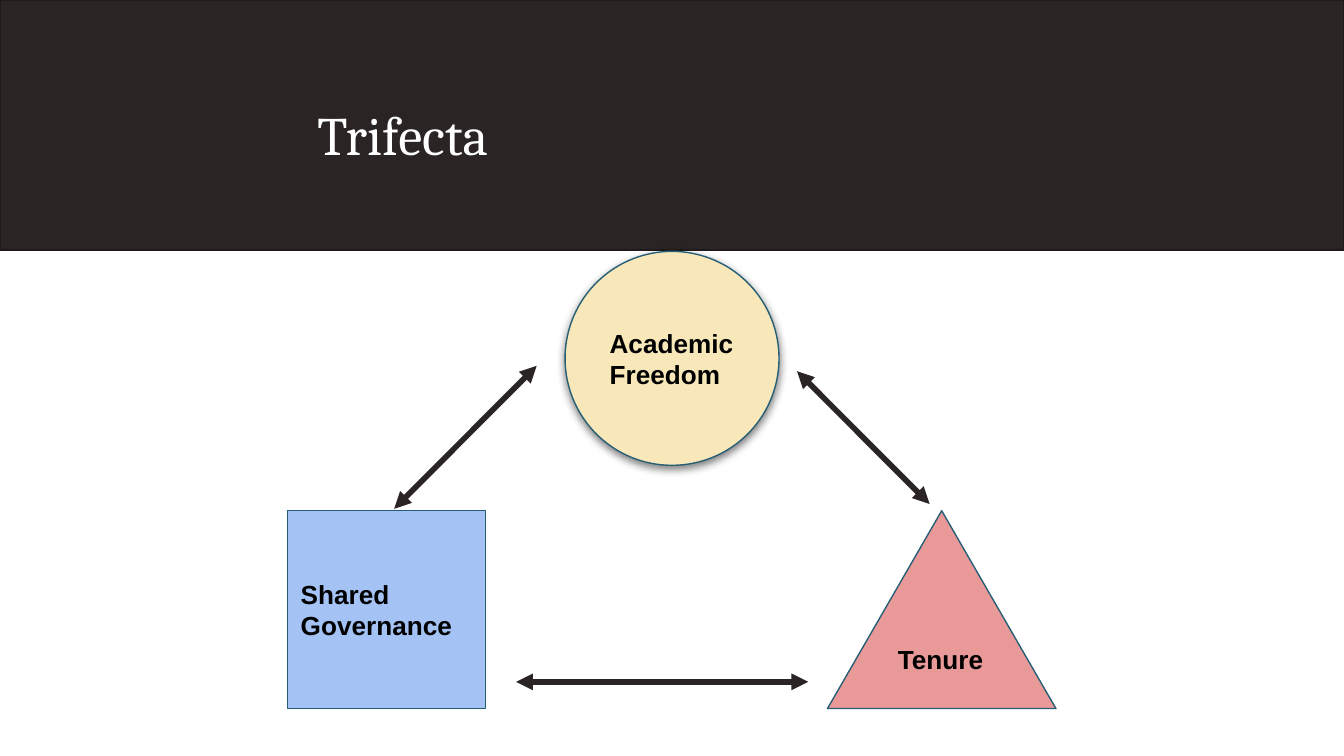
import pptx
import pptx.util
import pptx.dml.color
import pptx.enum.shapes
import pptx.enum.text
import pptx.oxml
import pptx.oxml.ns

Pt = pptx.util.Pt
SHAPES = pptx.enum.shapes.MSO_SHAPE
MIDDLE = pptx.enum.text.MSO_ANCHOR.MIDDLE
LEFT = pptx.enum.text.PP_ALIGN.LEFT

COLORS = {
    "band": "2B2425", "band_line": "1F1A1B", "title": "FFFFFF", "label": "000000",
    "outline": "265E76", "cream": "F8E8B9", "blue": "A4C2F4", "red": "EA9999",
}
SHADOW = (
    f'<a:effectLst {pptx.oxml.ns.nsdecls("a")}>'
    '<a:outerShdw blurRad="57150" dist="19050" dir="5400000" algn="bl" rotWithShape="0">'
    '<a:srgbClr val="000000"><a:alpha val="50000"/></a:srgbClr>'
    '</a:outerShdw></a:effectLst>'
)


def rgb(name):
    return pptx.dml.color.RGBColor.from_string(COLORS[name])


def add_filled_shape(kind, box, fill, outline, width):
    shape = slide.shapes.add_shape(kind, *map(Pt, box))
    shape.shadow.inherit = False
    shape.fill.solid()
    shape.fill.fore_color.rgb = rgb(fill)
    shape.line.color.rgb = rgb(outline)
    shape.line.width = Pt(width)
    return shape


presentation = pptx.Presentation()
presentation.slide_width = Pt(720)
presentation.slide_height = Pt(405)
slide = presentation.slides.add_slide(presentation.slide_layouts[5])

# Title on a dark band
title = slide.shapes.title
band = add_filled_shape(SHAPES.RECTANGLE, (0, 0, 720, 134), "band", "band_line", 1)
title._element.addprevious(band._element)
title_format = {"left": 165, "top": 24, "width": 505.5, "height": 99.5}
for name, value in title_format.items():
    setattr(title, name, Pt(value))
frame = title.text_frame
frame_format = {
    "margin_left": Pt(5), "margin_right": Pt(5), "margin_top": Pt(3),
    "margin_bottom": Pt(3), "vertical_anchor": MIDDLE, "word_wrap": True,
}
for name, value in frame_format.items():
    setattr(frame, name, value)
frame.text = "Trifecta"
paragraph = frame.paragraphs[0]
paragraph.alignment = LEFT
paragraph.line_spacing = 0.9
for name, value in {"name": "Cambria", "size": Pt(29)}.items():
    setattr(paragraph.font, name, value)
paragraph.font.color.rgb = rgb("title")

# The three linked principles
principles = [
    ("Academic Freedom", SHAPES.OVAL, (302.7, 134.7, 114.6, 114.6), "cream"),
    ("Shared Governance", SHAPES.RECTANGLE, (154, 273.6, 106, 106), "blue"),
    ("Tenure", SHAPES.ISOSCELES_TRIANGLE, (443.3, 273.6, 122.4, 106), "red"),
]
for label, kind, box, fill in principles:
    shape = add_filled_shape(kind, box, fill, "outline", 0.75)
    if kind == SHAPES.OVAL:
        properties = shape._element.spPr
        properties.remove(properties.find(pptx.oxml.ns.qn("a:effectLst")))
        properties.append(pptx.oxml.parse_xml(SHADOW))
    frame = shape.text_frame
    frame.word_wrap = True
    frame.vertical_anchor = MIDDLE
    for side in ("left", "right", "top", "bottom"):
        setattr(frame, f"margin_{side}", Pt(7.2))
    frame.text = label
    paragraph = frame.paragraphs[0]
    paragraph.alignment = LEFT
    for name, value in {"name": "Arial", "size": Pt(14), "bold": True}.items():
        setattr(paragraph.font, name, value)
    paragraph.font.color.rgb = rgb("label")

# Two-way arrows between the principles
arrows = [
    (276.5, 365.3, 433, 365.3),
    (427, 198.9, 498, 270),
    (211.2, 272.6, 287.5, 196),
]
for ends in arrows:
    connector = slide.shapes.add_connector(
        pptx.enum.shapes.MSO_CONNECTOR.STRAIGHT, *map(Pt, ends))
    connector.line.color.rgb = rgb("band")
    connector.line.width = Pt(3)
    line = connector.line._get_or_add_ln()
    for end in ("headEnd", "tailEnd"):
        line.append(pptx.oxml.parse_xml(
            f'<a:{end} {pptx.oxml.ns.nsdecls("a")} type="triangle"/>'))
    connector._element.spPr.append(pptx.oxml.parse_xml(
        f'<a:effectLst {pptx.oxml.ns.nsdecls("a")}/>'))

presentation.save("out.pptx")
